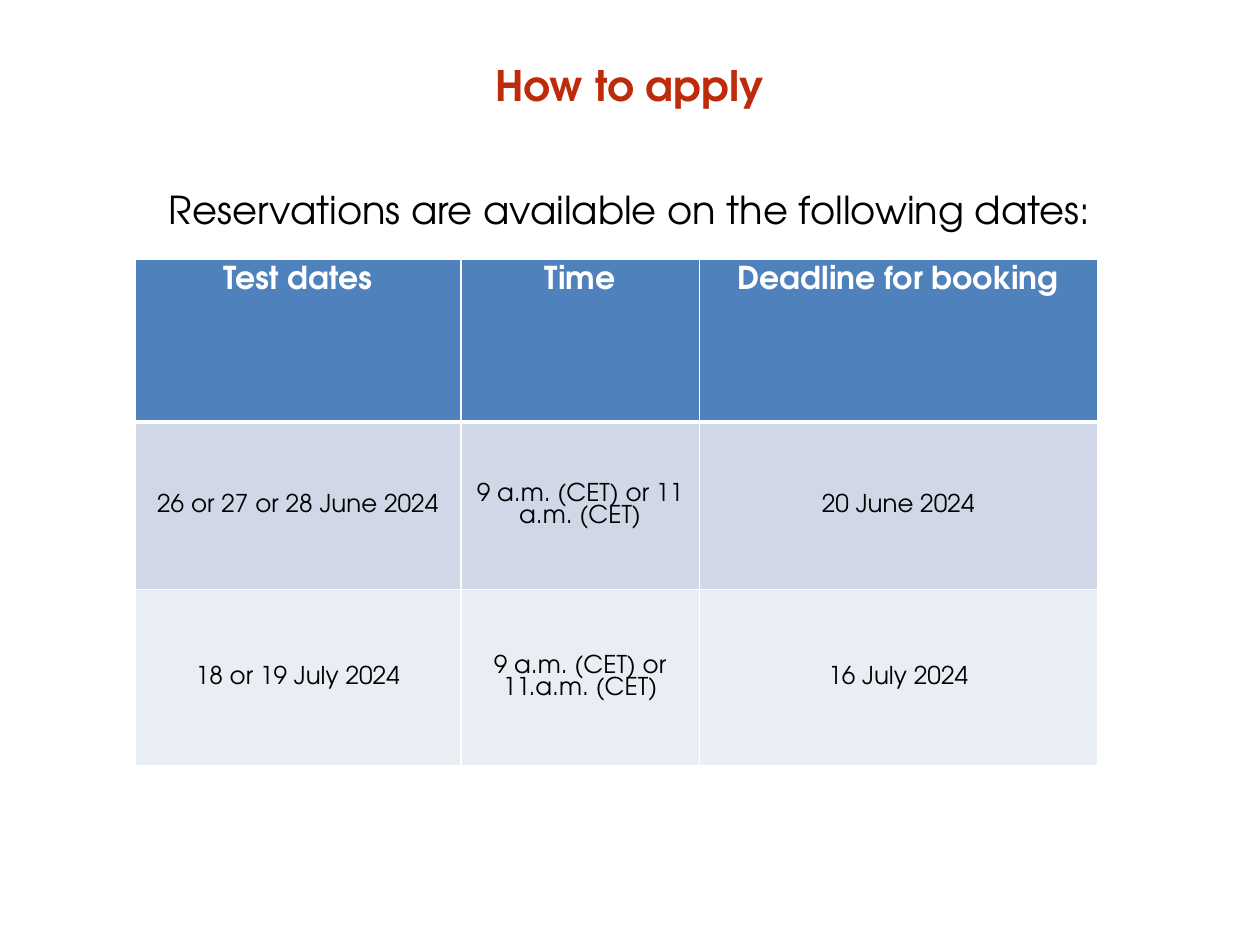
import pptx
import pptx.dml.color
import pptx.enum.text
import pptx.oxml
import pptx.oxml.ns
import pptx.util

FONT = "TeX Gyre Adventor"
Inches, Pt = pptx.util.Inches, pptx.util.Pt
ANCHOR = pptx.enum.text.MSO_ANCHOR


def rgb(value):
    return pptx.dml.color.RGBColor.from_string(value)


def write(tf, text, size, color, bold=False):
    """Fill a text frame with one centred, formatted paragraph."""
    tf.word_wrap = True
    p = tf.paragraphs[0]
    p.text = text
    p.alignment = pptx.enum.text.PP_ALIGN.CENTER
    p.space_before = Pt(0)
    font = p.runs[0].font
    font.name, font.size, font.bold = FONT, Pt(size), bold
    font.color.rgb = rgb(color)


prs = pptx.Presentation()
prs.slide_width, prs.slide_height = Inches(10), Inches(7.5)
s = prs.slides.add_slide(prs.slide_layouts[5])
left, width = Inches(0.39), Inches(9.21)

title = s.shapes.title
title.left, title.top, title.width, title.height = left, Inches(0.52), width, Inches(0.71)
title.text_frame.vertical_anchor = ANCHOR.TOP
write(title.text_frame, "How to apply", 24, "BD2B0B", bold=True)
title.text_frame.paragraphs[0].line_spacing = Pt(22)

intro = s.shapes.add_textbox(left, Inches(1.43), width, Inches(0.47))
write(intro.text_frame, "Reservations are available on the following dates:", 22, "000000")

rows = [
    ["Test dates", "Time", "Deadline for booking"],
    ["26 or 27 or 28 June 2024", "9 a.m. (CET) or 11 a.m. (CET)", "20 June 2024"],
    ["18 or 19 July 2024", "9 a.m. (CET) or 11.a.m. (CET)", "16 July 2024"],
]
col_widths = [2.59, 1.89, 3.16]
row_heights = [1.29, 1.33, 1.4]
fills = ["4F81BD", "D0D8E8", "E9EDF4"]

table = s.shapes.add_table(
    len(rows), len(col_widths), Inches(1.07), Inches(2.06),
    Inches(sum(col_widths)), Inches(sum(row_heights))).table
for column, col_width in zip(table.columns, col_widths):
    column.width = Inches(col_width)
for row, row_height in zip(table.rows, row_heights):
    row.height = Inches(row_height)

for i, texts in enumerate(rows):
    header = i == 0
    for j, text in enumerate(texts):
        cell = table.cell(i, j)
        if header:
            write(cell.text_frame, text, 18, "FFFFFF", bold=True)
        else:
            cell.vertical_anchor = ANCHOR.MIDDLE
            write(cell.text_frame, text, 14, "000000")
        # Borders precede the fill in the cell properties
        tcPr = cell._tc.get_or_add_tcPr()
        for side in ("lnL", "lnR", "lnT", "lnB"):
            thick = (header and side == "lnB") or (i == 1 and side == "lnT")
            tcPr.append(pptx.oxml.parse_xml(
                f'<a:{side} {pptx.oxml.ns.nsdecls("a")} w="{Pt(3 if thick else 1)}">'
                f'<a:solidFill><a:srgbClr val="FFFFFF"/></a:solidFill></a:{side}>'))
        cell.fill.solid()
        cell.fill.fore_color.rgb = rgb(fills[i])

prs.save("out.pptx")
